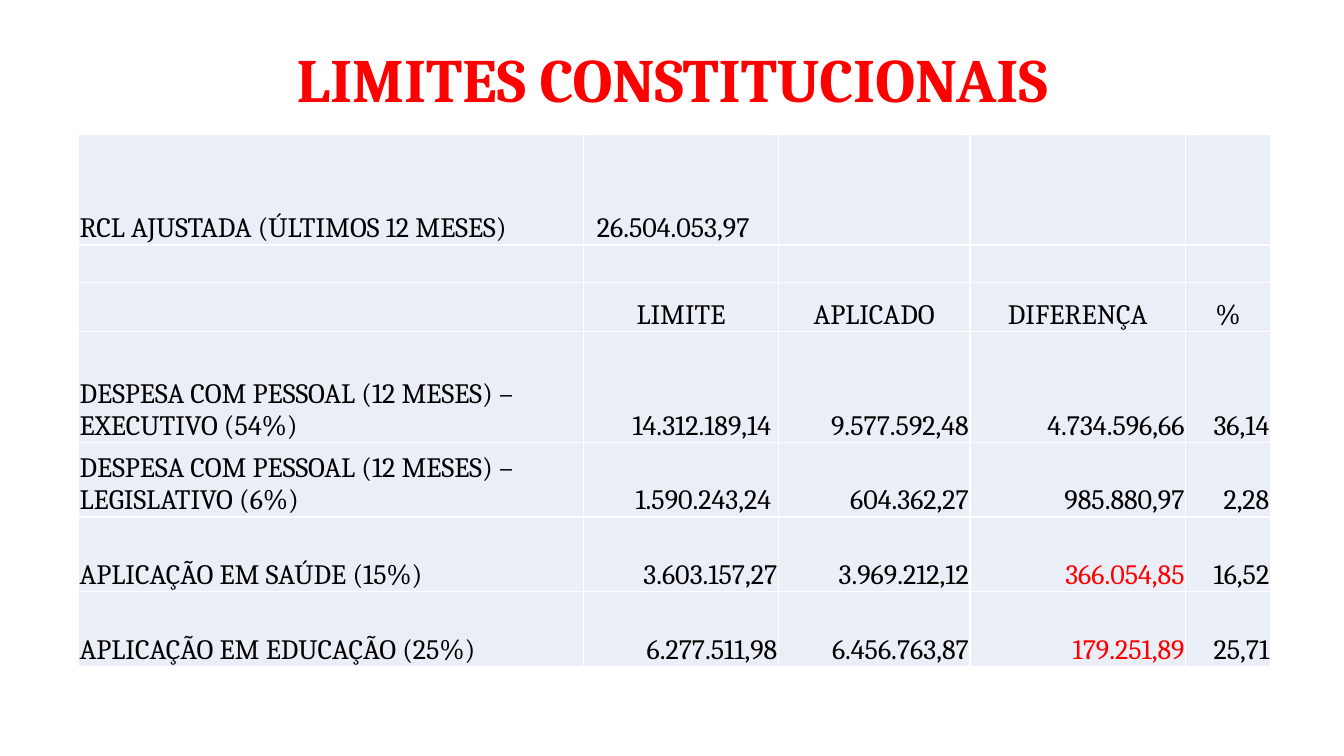
from lxml import etree
from pptx import Presentation
from pptx.dml.color import RGBColor
from pptx.enum.text import MSO_ANCHOR as Anchor, PP_ALIGN as Align
from pptx.oxml.ns import qn
from pptx.util import Inches, Pt

COLORS = {"red": "FF0000", "black": "000000", "band": "EAEFF7", "border": "FFFFFF"}
FONT = "Cambria"


def add_run(paragraph, text, size, color, bold=False):
    run = paragraph.add_run()
    run.text = text
    run.font.name = FONT
    run.font.size = Pt(size)
    run.font.bold = bold
    run.font.color.rgb = RGBColor.from_string(COLORS[color])


def add_borders(cell):
    properties = cell._tc.get_or_add_tcPr()
    for position, side in enumerate(("lnL", "lnR", "lnT", "lnB")):
        line = etree.Element(qn(f"a:{side}"), w=str(Pt(1)))
        fill = etree.SubElement(line, qn("a:solidFill"))
        etree.SubElement(fill, qn("a:srgbClr"), val=COLORS["border"])
        properties.insert(position, line)


prs = Presentation()
prs.slide_width = Inches(13.33)
prs.slide_height = Inches(7.5)
slide = prs.slides.add_slide(prs.slide_layouts[5])

title = slide.shapes.title
title.left, title.top = Inches(0.92), Inches(0.4)
title.width, title.height = Inches(11.5), Inches(0.83)
title.text_frame.vertical_anchor = Anchor.MIDDLE
heading = title.text_frame.paragraphs[0]
heading.alignment = Align.CENTER
heading.line_spacing = 0.9
add_run(heading, "LIMITES CONSTITUCIONAIS", 44, "red", bold=True)

limits = [
    ["RCL AJUSTADA (ÚLTIMOS 12 MESES)", "26.504.053,97", "", "", ""],
    ["", "", "", "", ""],
    ["", "LIMITE", "APLICADO", "DIFERENÇA", "%"],
    ["DESPESA COM PESSOAL (12 MESES) – EXECUTIVO (54%)",
     "14.312.189,14", "9.577.592,48", "4.734.596,66", "36,14"],
    ["DESPESA COM PESSOAL (12 MESES) – LEGISLATIVO (6%)",
     "1.590.243,24", "604.362,27", "985.880,97", "2,28"],
    ["APLICAÇÃO EM SAÚDE (15%)", "3.603.157,27", "3.969.212,12", "366.054,85", "16,52"],
    ["APLICAÇÃO EM EDUCAÇÃO (25%)", "6.277.511,98", "6.456.763,87", "179.251,89", "25,71"],
]
column_widths = [5.01, 1.93, 1.9, 2.14, 0.84]
row_heights = [1.1, 0.37, 0.49, 1.1, 0.74, 0.74, 0.74]
REVENUE_ROW, HEADER_ROW = 0, 2
STAFF_ROWS, SURPLUS_ROWS = (3, 4), (5, 6)
LIMIT_COLUMN, DIFFERENCE_COLUMN = 1, 3

table = slide.shapes.add_table(
    len(row_heights), len(column_widths),
    Inches(0.78), Inches(1.33), Inches(11.82), Inches(5.28),
).table
table.first_row = False
table.horz_banding = False
for column, width in zip(table.columns, column_widths):
    column.width = Inches(width)
for row, height in zip(table.rows, row_heights):
    row.height = Inches(height)

for r, values in enumerate(limits):
    for c, value in enumerate(values):
        cell = table.cell(r, c)
        cell.fill.solid()
        cell.fill.fore_color.rgb = RGBColor.from_string(COLORS["band"])
        add_borders(cell)
        cell.vertical_anchor = Anchor.BOTTOM
        cell.margin_left = cell.margin_right = cell.margin_top = Inches(0.01)
        cell.margin_bottom = 0
        if not value:
            continue
        if c == LIMIT_COLUMN and r == REVENUE_ROW:
            cell.margin_left = Inches(0.13)
        if c == LIMIT_COLUMN and r in STAFF_ROWS:
            cell.margin_right = Inches(0.07)
        paragraph = cell.text_frame.paragraphs[0]
        if r == HEADER_ROW:
            paragraph.alignment = Align.CENTER
        elif c == 0 or r == REVENUE_ROW:
            paragraph.alignment = Align.LEFT
        else:
            paragraph.alignment = Align.RIGHT
        surplus = r in SURPLUS_ROWS and c == DIFFERENCE_COLUMN
        add_run(paragraph, value, 20, "red" if surplus else "black")

prs.save("out.pptx")
